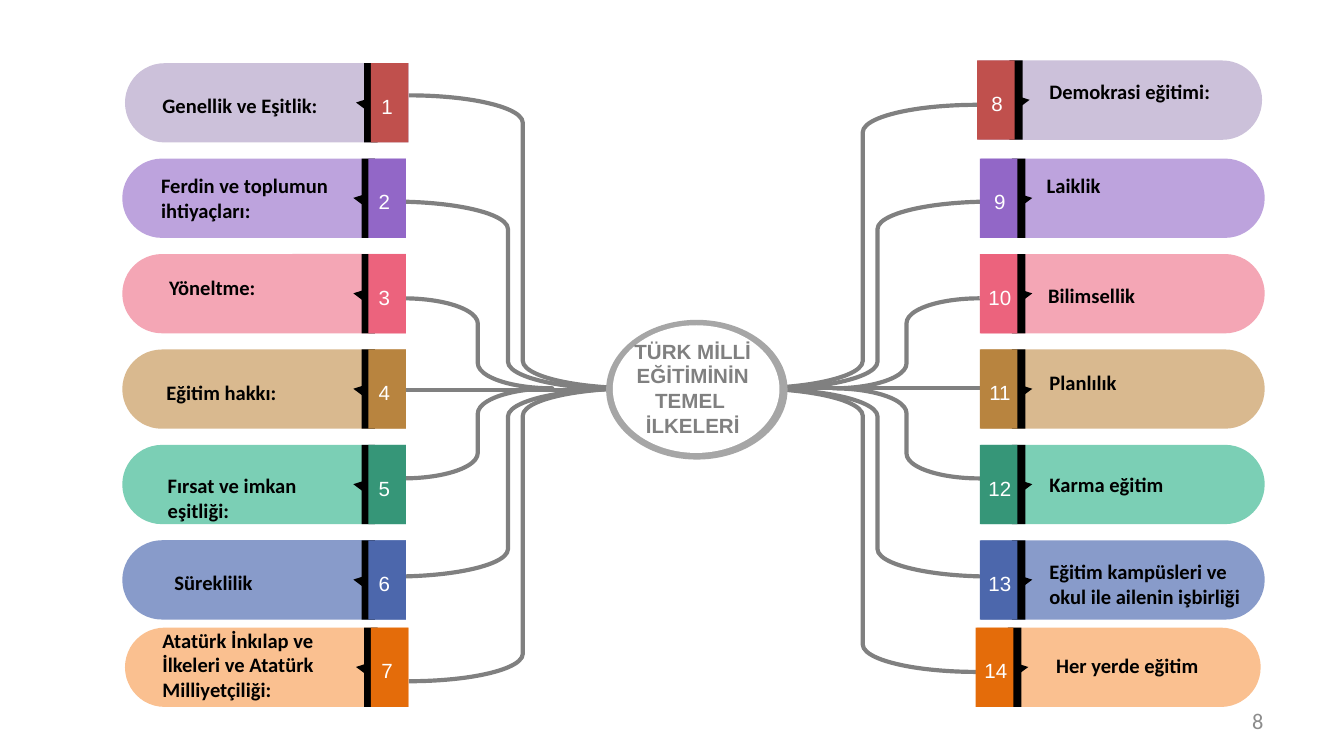
import pptx
import pptx.dml.color
import pptx.enum.shapes
import pptx.enum.text
import pptx.oxml.ns
import pptx.util
from lxml import etree

RGBColor = pptx.dml.color.RGBColor
SHAPE = pptx.enum.shapes.MSO_SHAPE
ALIGN = pptx.enum.text.PP_ALIGN

PX = 9144  # EMU in one px, 100 px to the inch
PAGE_W = 1000

BLACK = RGBColor(0x00, 0x00, 0x00)
WHITE = RGBColor(0xFF, 0xFF, 0xFF)
GREY = RGBColor(0x80, 0x80, 0x80)
RING_GREY = RGBColor(0xA6, 0xA6, 0xA6)
PAGE_GREY = RGBColor(0x8C, 0x8C, 0x8C)

# Card and number block colours, one pair for each row
ROW_COLOURS = [
    (RGBColor(0xCC, 0xC1, 0xDA), RGBColor(0xC0, 0x50, 0x4D)),
    (RGBColor(0xBD, 0xA3, 0xDD), RGBColor(0x92, 0x67, 0xC7)),
    (RGBColor(0xF4, 0xA6, 0xB5), RGBColor(0xEC, 0x63, 0x7D)),
    (RGBColor(0xD9, 0xB9, 0x8F), RGBColor(0xB8, 0x84, 0x3F)),
    (RGBColor(0x7B, 0xCF, 0xB5), RGBColor(0x36, 0x96, 0x78)),
    (RGBColor(0x88, 0x9B, 0xCA), RGBColor(0x4C, 0x67, 0xAC)),
    (RGBColor(0xFA, 0xC0, 0x90), RGBColor(0xE4, 0x6C, 0x0A)),
]
CARD_W, CARD_H = 211, 59
ROW_STEP = 71
INNER_TOPS = [118 + ROW_STEP * row for row in range(5)]

# Part offsets from the left edge of a card: strip, arrow, block, number
LEFT_PARTS = (178, 173, 183, 174)
RIGHT_PARTS = (23, 27, -1, -7)

# Label text, then its left, top, width and height inside the card
LEFT_LABELS = [
    ("Genellik ve Eşitlik:", 18, 17, 164, 29),
    ("Ferdin ve toplumun ihtiyaçları:", 19, 6, 152, 66),
    ("Yöneltme:", 25, 11, 140, 29),
    ("Eğitim hakkı:", 23, 18, 164, 29),
    ("Fırsat ve imkan eşitliği:", 24, 16, 164, 47),
    ("Süreklilik", 29, 17, 164, 29),
    ("Atatürk İnkılap ve İlkeleri ve Atatürk Milliyetçiliği:", 18, -5, 164, 66),
]
RIGHT_LABELS = [
    ("Demokrasi eğitimi:", 43, 9, 164, 29),
    ("Laiklik", 39, 6, 164, 29),
    ("Bilimsellik", 40, 17, 187, 29),
    ("Planlılık", 41, 10, 164, 29),
    ("Karma eğitim", 41, 15, 164, 29),
    ("Eğitim kampüsleri ve okul ile ailenin işbirliği", 41, 9, 164, 47),
    ("Her yerde eğitim", 49, 14, 164, 29),
]


def add_filled(page, kind, left, top, width, height, colour, rotation=0):
    shape = page.shapes.add_shape(kind, left * PX, top * PX, width * PX, height * PX)
    shape.shadow.inherit = False
    shape.fill.solid()
    shape.fill.fore_color.rgb = colour
    shape.line.fill.background()
    shape.rotation = rotation
    return shape


def add_text(page, text, left, top, width, height, font, colour,
             size=11, bold=False, align=ALIGN.LEFT):
    box = page.shapes.add_textbox(left * PX, top * PX, width * PX, height * PX)
    box.text_frame.word_wrap = True
    box.text_frame.text = text
    para = box.text_frame.paragraphs[0]
    para.alignment = align
    para.font.name = font
    para.font.size = pptx.util.Pt(size)
    para.font.bold = bold
    para.font.color.rgb = colour
    return box


def add_branches(page, braces, line, flipped):
    """Draw one side's nested braces and its straight middle line."""
    for left, top, width, height, curve in braces:
        brace = page.shapes.add_shape(SHAPE.RIGHT_BRACE, left * PX, top * PX,
                                      width * PX, height * PX)
        brace.shadow.inherit = False
        brace.adjustments[0] = curve
        brace.fill.background()
        brace.line.color.rgb = GREY
        brace.line.width = pptx.util.Pt(2.25)
        if flipped:
            brace.element.spPr.find(pptx.oxml.ns.qn("a:xfrm")).set("flipH", "1")
    start, end, level = line
    middle = page.shapes.add_connector(pptx.enum.shapes.MSO_CONNECTOR.STRAIGHT,
                                       start * PX, level * PX, end * PX, level * PX)
    middle.line.color.rgb = GREY
    middle.line.width = pptx.util.Pt(2.25)
    etree.SubElement(middle.element.spPr, pptx.oxml.ns.qn("a:effectLst"))


def add_card(page, left, top, number, label, colours, on_left):
    card_colour, block_colour = colours
    strip, arrow, block, digits = LEFT_PARTS if on_left else RIGHT_PARTS
    # The rounded end is the top of an upright shape turned on its side
    inset = (CARD_W - CARD_H) // 2
    card = add_filled(page, SHAPE.ROUND_2_SAME_RECTANGLE, left + inset, top - inset,
                      CARD_H, CARD_W, card_colour, 270 if on_left else 90)
    card.adjustments[0] = 0.5
    add_filled(page, SHAPE.RECTANGLE, left + strip, top, 10, CARD_H, BLACK)
    add_filled(page, SHAPE.ISOSCELES_TRIANGLE, left + arrow, top + 26, 10, 7,
               BLACK, 36.7 if on_left else 323.3)
    add_filled(page, SHAPE.RECTANGLE, left + block, top, 28, CARD_H, block_colour)
    add_text(page, str(number), left + digits, top + 18, 42, 29, "Arial", WHITE,
             align=ALIGN.CENTER)
    text, dx, dy, width, height = label
    add_text(page, text, left + dx, top + dy, width, height, "Calibri", BLACK, bold=True)


def add_column(page, lefts, tops, first, labels, on_left):
    rows = zip(lefts, tops, labels, ROW_COLOURS)
    for number, (left, top, label, colours) in enumerate(rows, first):
        add_card(page, left, top, number, label, colours, on_left)


def add_hub(page, left, top, width, height):
    add_filled(page, SHAPE.OVAL, left, top, width, height, RING_GREY)
    add_filled(page, SHAPE.OVAL, left + 5, top + 4, width - 11, height - 9, WHITE)
    add_text(page, "TÜRK MİLLİ EĞİTİMİNİN TEMEL \vİLKELERİ", left - 14, top + 9,
             157, 84, "Arial", GREY, bold=True, align=ALIGN.CENTER)


def main():
    deck = pptx.Presentation()
    deck.slide_width = PAGE_W * PX
    deck.slide_height = PAGE_W * PX * 9 // 16
    page = deck.slides.add_slide(deck.slide_layouts[6])

    add_branches(page, [(304, 71, 170, 436, 0.12), (293, 150, 170, 279, 0.12),
                        (300, 222, 111, 134, 0.17)], (302, 429, 290), False)
    add_branches(page, [(557, 78, 170, 422, 0.12), (568, 150, 170, 279, 0.12),
                        (620, 222, 109, 134, 0.17)], (601, 732, 289), True)
    add_column(page, [93] + [91] * 5 + [93], [47] + INNER_TOPS + [467],
               1, LEFT_LABELS, True)
    add_column(page, [728] + [730] * 5 + [727], [45] + INNER_TOPS + [467],
               8, RIGHT_LABELS, False)
    add_hub(page, 451, 238, 135, 104)
    page_number = add_text(page, "8", 717, 521, 233, 30, "Calibri", PAGE_GREY,
                           size=12, align=ALIGN.RIGHT)
    page_number.text_frame.vertical_anchor = pptx.enum.text.MSO_ANCHOR.MIDDLE

    deck.save("out.pptx")


if __name__ == "__main__":
    main()
